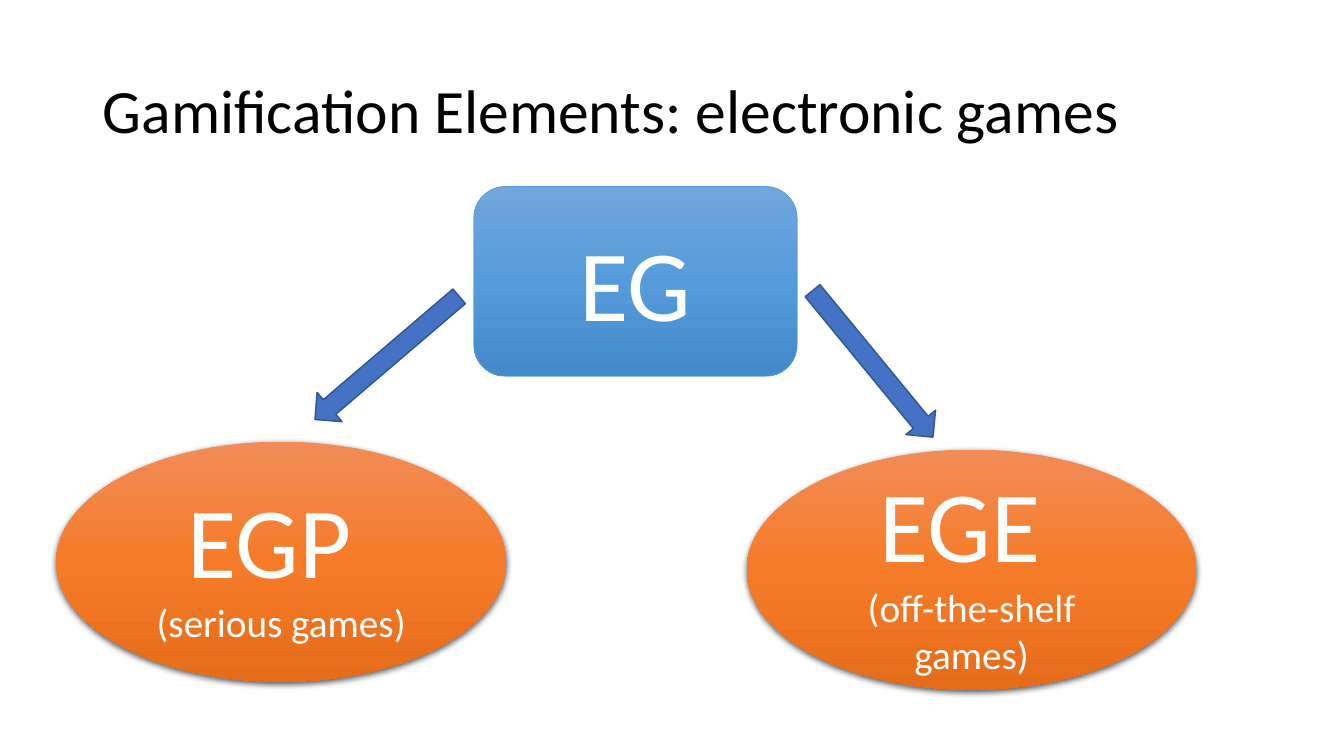
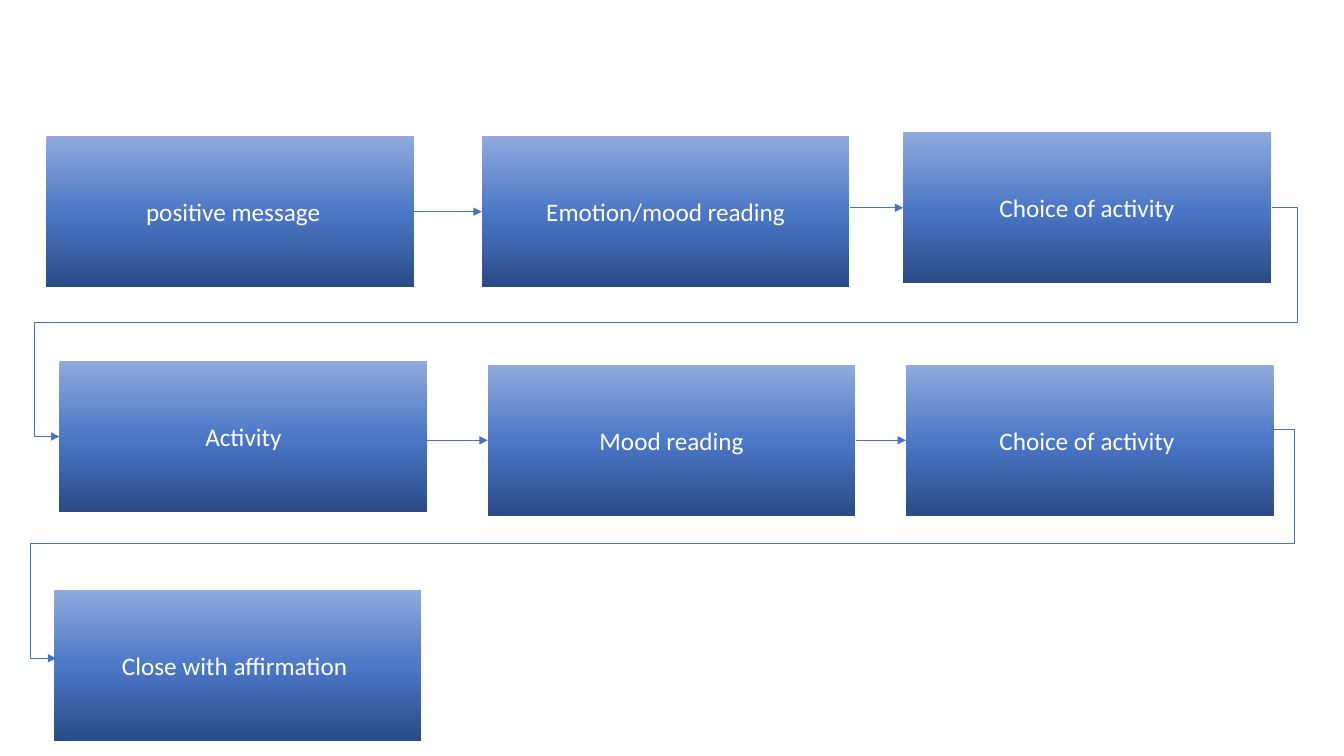
from dataclasses import dataclass
from typing import Any

from lxml.etree import SubElement
from pptx import Presentation
from pptx.dml.color import RGBColor
from pptx.enum.shapes import MSO_CONNECTOR, MSO_SHAPE
from pptx.enum.text import MSO_ANCHOR, PP_ALIGN
from pptx.oxml.ns import qn
from pptx.util import Cm, Pt

COLORS = {
    "title": "000000",
    "text": "FFFFFF",
    "arrow": "4472C4",
    "arrow_edge": "325491",
    "root_edge": "5B9BD5",
    "shadow": "000000",
}
GRADIENTS = {
    "root": ((0, "71A6DB"), (50, "559BDB"), (100, "448ACA")),
    "branch": ((0, "F18C57"), (50, "F67B28"), (100, "E56C19")),
    "step": ((0, "8FAADC"), (52, "4A76C6"), (100, "2A4B86")),
}
FRAME_FORMAT = {"word_wrap": True, "vertical_anchor": MSO_ANCHOR.MIDDLE}
CENTERED = {"alignment": PP_ALIGN.CENTER}
TITLE_FORMAT = {"alignment": PP_ALIGN.LEFT, "line_spacing": 0.9}


@dataclass(frozen=True)
class Line:
    text: str
    size: int


@dataclass(frozen=True)
class Node:
    x: float
    y: float
    w: float
    h: float
    lines: tuple[Line, ...]
    gradient: str
    preset: MSO_SHAPE
    edge: str = ""
    shadow: bool = False


@dataclass(frozen=True)
class Arrow:
    x: float
    y: float
    rotation: float


@dataclass(frozen=True)
class Wrap:
    x1: float
    y1: float
    x2: float
    y2: float


def step(x: float, y: float, text: str) -> Node:
    return Node(x, y, 9.27, 3.81, (Line(text, 18),), "step", MSO_SHAPE.RECTANGLE)


def branch(x: float, y: float, name: str, detail: str) -> Node:
    lines = (Line(name, 72), Line(detail, 28))
    return Node(x, y, 11.33, 6.05, lines, "branch", MSO_SHAPE.OVAL, shadow=True)


TITLE = Line("Gamification Elements: electronic games", 44)
GAME_TYPES = (
    Node(11.94, 4.7, 8.15, 4.78, (Line("EG", 72),), "root",
         MSO_SHAPE.ROUNDED_RECTANGLE, edge="root_edge"),
    branch(1.42, 11.13, "EGP ", "(serious games)"),
    branch(18.82, 11.33, "EGE ", "(off-the-shelf games)"),
)
ARROWS = (Arrow(9.27, 6.63, 49.5), Arrow(21.51, 6.78, 320.6))
STEP_ROWS = (
    (step(1.17, 3.43, " positive message"),
     step(12.14, 3.43, "Emotion/mood reading"),
     step(22.76, 3.33, "Choice of activity")),
    (step(1.5, 9.09, "Activity"),
     step(12.29, 9.19, "Mood reading"),
     step(22.83, 9.19, "Choice of activity ")),
    (step(1.35, 14.86, "Close with affirmation "),),
)
WRAPS = (Wrap(32.05, 5.23, 1.5, 11), Wrap(31.98, 10.82, 1.42, 16.59))


def rgb(name: str) -> RGBColor:
    return RGBColor.from_string(COLORS[name])


def apply_format(target: Any, values: dict[str, Any]) -> None:
    for name, value in values.items():
        setattr(target, name, value)


def write_lines(s: Any, lines: tuple[Line, ...], color: str,
                paragraph_format: dict[str, Any]) -> None:
    tf = s.text_frame
    apply_format(tf, FRAME_FORMAT)
    for i, line in enumerate(lines):
        p = tf.add_paragraph() if i else tf.paragraphs[0]
        apply_format(p, paragraph_format)
        r = p.add_run()
        r.text = line.text
        apply_format(r.font, {"name": "Calibri", "size": Pt(line.size)})
        r.font.color.rgb = rgb(color)


def fill_gradient(s: Any, name: str) -> None:
    s.fill.gradient()
    s.fill.gradient_angle = 270
    stops = s._element.spPr.find(qn("a:gradFill")).find(qn("a:gsLst"))
    stops.clear()
    for position, color in GRADIENTS[name]:
        stop = SubElement(stops, qn("a:gs"), pos=str(position * 1000))
        SubElement(stop, qn("a:srgbClr"), val=color)


def add_shadow(s: Any) -> None:
    effects = s._element.spPr.find(qn("a:effectLst"))
    outer = SubElement(effects, qn("a:outerShdw"), blurRad=str(Pt(4.5)),
                       dist=str(Pt(1.5)), dir="5400000", algn="ctr", rotWithShape="0")
    color = SubElement(outer, qn("a:srgbClr"), val=COLORS["shadow"])
    SubElement(color, qn("a:alpha"), val="63000")


def add_node(sp: Any, node: Node) -> Any:
    s = sp.add_shape(node.preset, Cm(node.x), Cm(node.y), Cm(node.w), Cm(node.h))
    s.shadow.inherit = False
    fill_gradient(s, node.gradient)
    if node.edge:
        s.line.color.rgb = rgb(node.edge)
        s.line.width = Pt(0.5)
    else:
        s.line.fill.background()
    if node.shadow:
        add_shadow(s)
    write_lines(s, node.lines, "text", CENTERED)
    return s


def add_arrow(sp: Any, arrow: Arrow) -> None:
    s = sp.add_shape(MSO_SHAPE.DOWN_ARROW, Cm(arrow.x), Cm(arrow.y), Cm(0.97), Cm(4.78))
    s.shadow.inherit = False
    s.rotation = arrow.rotation
    s.fill.solid()
    s.fill.fore_color.rgb = rgb("arrow")
    s.line.color.rgb = rgb("arrow_edge")
    s.line.width = Pt(1)


def style_connector(c: Any) -> None:
    c.line.color.rgb = rgb("arrow")
    c.line.width = Pt(0.5)
    SubElement(c.line._get_or_add_ln(), qn("a:tailEnd"), type="triangle")
    SubElement(c._element.spPr, qn("a:effectLst"))


def link_steps(sp: Any, source: Any, target: Any) -> None:
    y = target.top + target.height // 2
    c = sp.add_connector(MSO_CONNECTOR.STRAIGHT, source.left + source.width, y,
                         target.left, y)
    if source.top == target.top:
        c.begin_connect(source, 3)
    c.end_connect(target, 1)
    style_connector(c)


def add_wrap(sp: Any, wrap: Wrap) -> None:
    c = sp.add_connector(MSO_CONNECTOR.ELBOW, Cm(wrap.x1), Cm(wrap.y1),
                         Cm(wrap.x2), Cm(wrap.y2))
    geometry = c._element.spPr.find(qn("a:prstGeom"))
    geometry.clear()
    geometry.set("prst", "bentConnector5")
    guides = SubElement(geometry, qn("a:avLst"))
    for i, value in enumerate((-2100, 50000, 102100), 1):
        SubElement(guides, qn("a:gd"), name=f"adj{i}", fmla=f"val {value}")
    style_connector(c)


def build_games(prs: Any) -> None:
    sp = prs.slides.add_slide(prs.slide_layouts[6]).shapes
    s = sp.add_textbox(Cm(2.34), Cm(1.02), Cm(29.21), Cm(3.68))
    write_lines(s, (TITLE,), "title", TITLE_FORMAT)
    for node in GAME_TYPES:
        add_node(sp, node)
    for arrow in ARROWS:
        add_arrow(sp, arrow)


def build_steps(prs: Any) -> None:
    sp = prs.slides.add_slide(prs.slide_layouts[6]).shapes
    rows = [[add_node(sp, node) for node in row] for row in STEP_ROWS]
    for row in rows:
        for source, target in zip(row, row[1:]):
            link_steps(sp, source, target)
    for wrap in WRAPS:
        add_wrap(sp, wrap)


def main() -> None:
    prs = Presentation()
    apply_format(prs, {"slide_width": Cm(33.87), "slide_height": Cm(19.05)})
    build_games(prs)
    build_steps(prs)
    prs.save("out.pptx")


if __name__ == "__main__":
    main()
